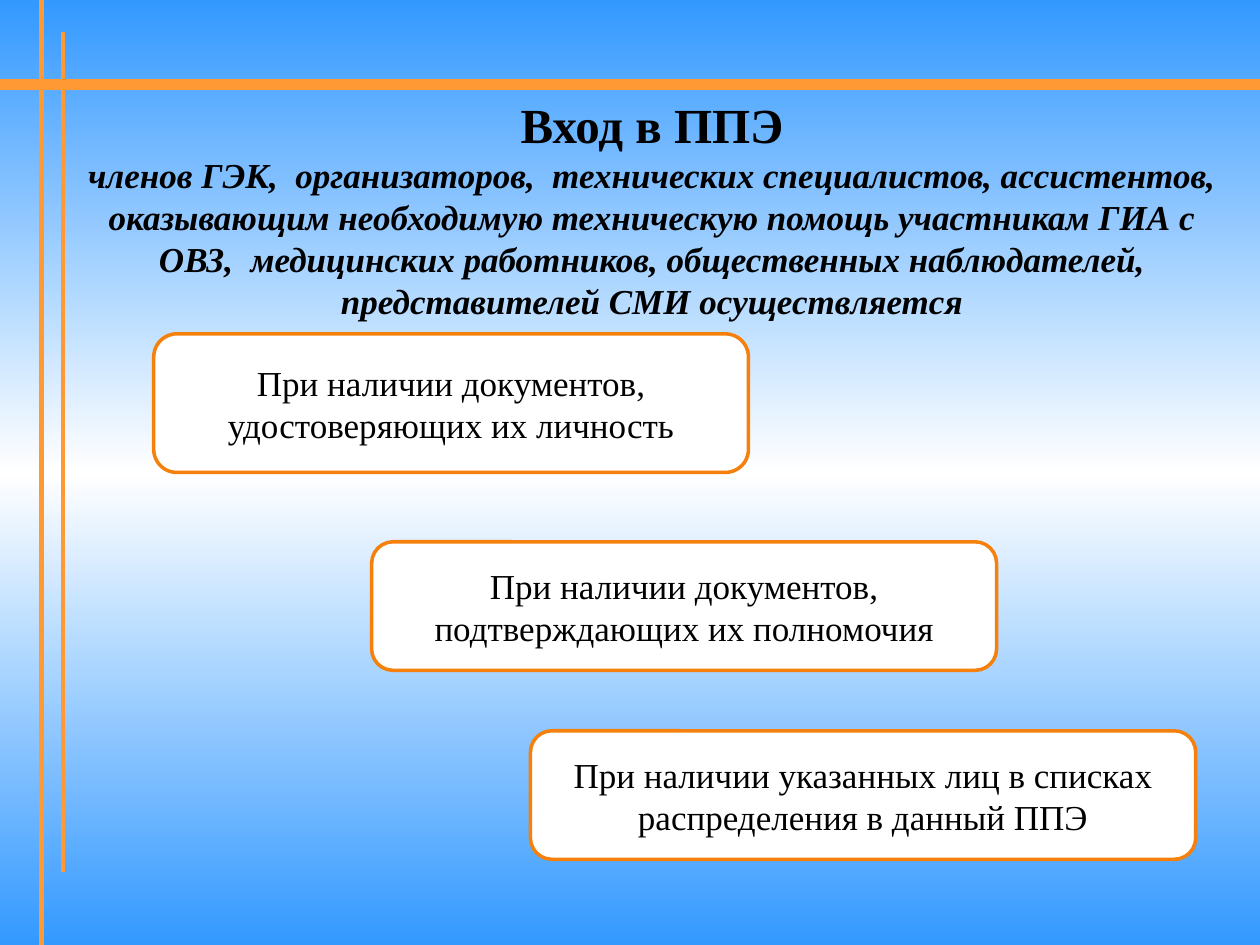
from copy import deepcopy

from pptx import Presentation
from pptx.dml.color import RGBColor
from pptx.enum.shapes import MSO_CONNECTOR, MSO_SHAPE
from pptx.enum.text import MSO_ANCHOR, PP_ALIGN
from pptx.oxml.ns import qn
from pptx.util import Inches, Pt
from lxml.etree import SubElement

FONT = "Times New Roman"
COLORS = {
    "blue": "3399FF",
    "white": "FFFFFF",
    "rule": "FF9933",
    "border": "F5800B",
    "text": "000000",
}


def color(name):
    return RGBColor.from_string(COLORS[name])


def set_background(s):
    """Vertical gradient: blue, white in the middle, blue."""
    fill = s.background.fill
    fill.gradient()
    fill.gradient_angle = 270
    stops = s.element.find(".//" + qn("a:gsLst"))
    stops.insert(1, deepcopy(stops[0]))
    for stop, name, position in zip(
        fill.gradient_stops, ("blue", "white", "blue"), (0, 0.5, 1)
    ):
        stop.color.rgb = color(name)
        stop.position = position


def add_rule(s, x1, y1, x2, y2, width):
    line = s.shapes.add_connector(
        MSO_CONNECTOR.STRAIGHT, Inches(x1), Inches(y1), Inches(x2), Inches(y2)
    )
    line.line.color.rgb = color("rule")
    line.line.width = Pt(width)
    SubElement(line.element.spPr, qn("a:effectLst"))


def add_run(p, text, size, bold=False, italic=False):
    p.alignment = PP_ALIGN.CENTER
    r = p.add_run()
    r.text = text
    r.font.name = FONT
    r.font.size = Pt(size)
    r.font.bold = bold
    r.font.italic = italic
    r.font.color.rgb = color("text")


def add_title(s, heading, subject):
    sp = s.shapes.add_textbox(Inches(0.51), Inches(0.7), Inches(9.33), Inches(1.85))
    tf = sp.text_frame
    tf.word_wrap = True
    add_run(tf.paragraphs[0], heading, 28, bold=True)
    add_run(tf.add_paragraph(), subject, 20, bold=True, italic=True)


def add_condition(s, left, top, width, height, text):
    sp = s.shapes.add_shape(
        MSO_SHAPE.ROUNDED_RECTANGLE,
        Inches(left), Inches(top), Inches(width), Inches(height),
    )
    sp.shadow.inherit = False
    sp.fill.solid()
    sp.fill.fore_color.rgb = color("white")
    sp.line.color.rgb = color("border")
    sp.line.width = Pt(2)
    tf = sp.text_frame
    tf.word_wrap = True
    tf.vertical_anchor = MSO_ANCHOR.MIDDLE
    add_run(tf.paragraphs[0], text, 20)


def main():
    prs = Presentation()
    prs.slide_width, prs.slide_height = Inches(10), Inches(7.5)
    s = prs.slides.add_slide(prs.slide_layouts[6])

    # Background and orange rules
    set_background(s)
    add_rule(s, 0, 0.67, 10, 0.67, 6)
    add_rule(s, 0.33, 0, 0.33, 7.5, 3)
    add_rule(s, 0.5, 0.25, 0.5, 6.92, 2.25)

    # Title
    add_title(
        s,
        "Вход в ППЭ",
        "членов ГЭК,  организаторов,  технических специалистов, ассистентов, "
        "оказывающим необходимую техническую помощь участникам ГИА с ОВЗ,  "
        "медицинских работников, общественных наблюдателей, "
        "представителей СМИ осуществляется",
    )

    # Entry conditions, stepping down to the right
    conditions = [
        (1.22, 2.65, 4.72, 1.1, "При наличии документов, удостоверяющих их личность"),
        (2.95, 4.3, 4.96, 1.02, "При наличии документов, подтверждающих их полномочия"),
        (4.21, 5.8, 5.28, 1.02,
         "При наличии указанных лиц в списках распределения в данный ППЭ"),
    ]
    for condition in conditions:
        add_condition(s, *condition)

    prs.save("out.pptx")


if __name__ == "__main__":
    main()
